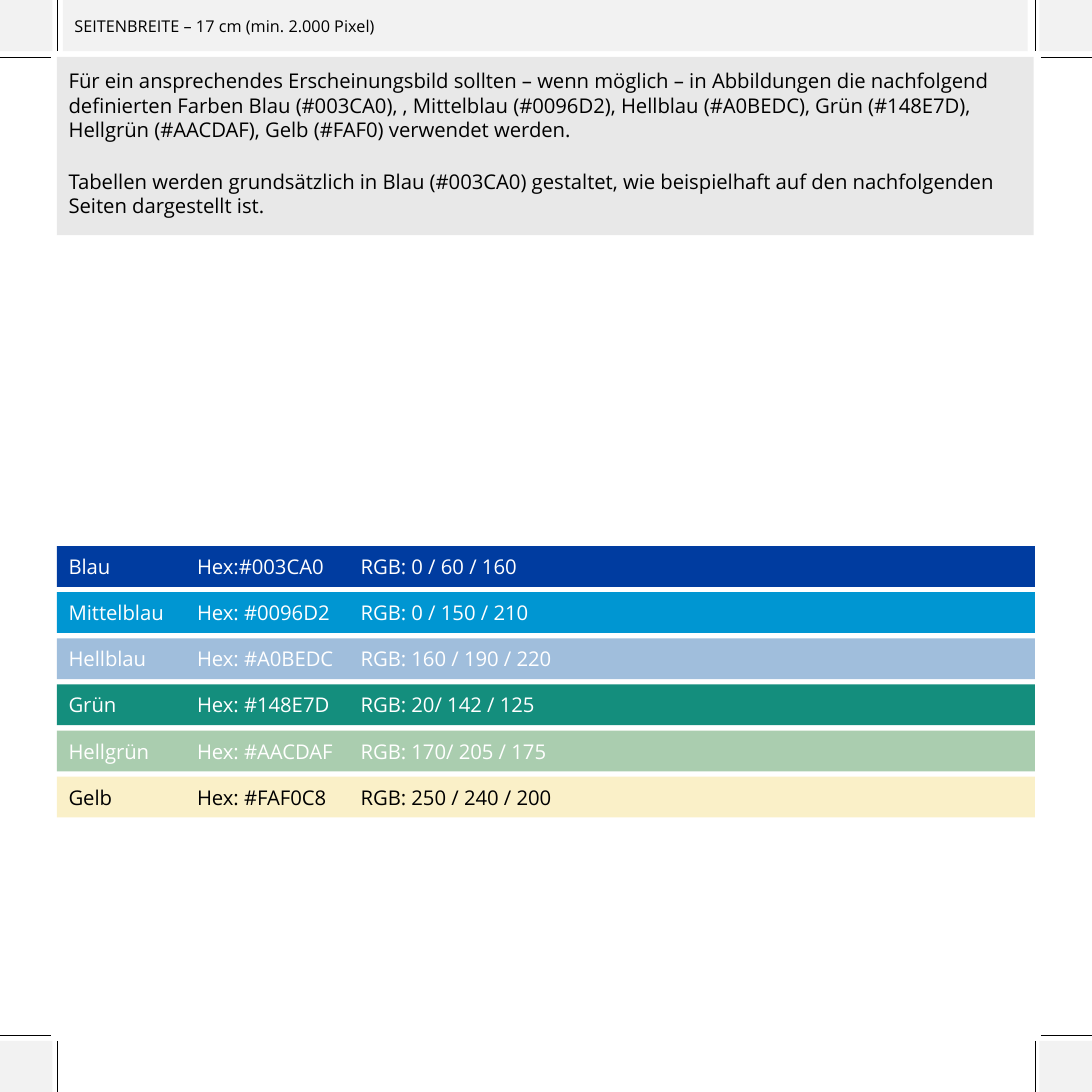
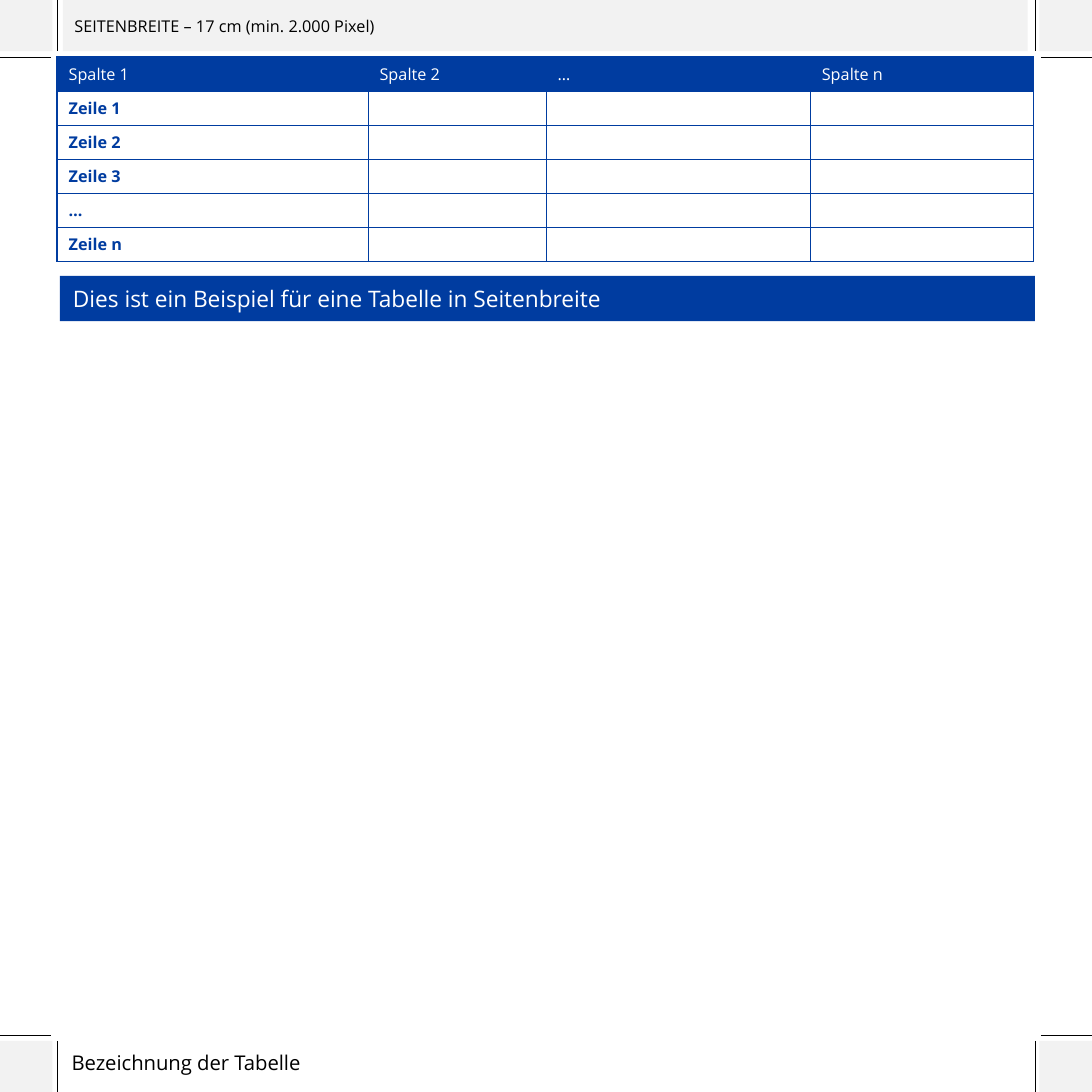
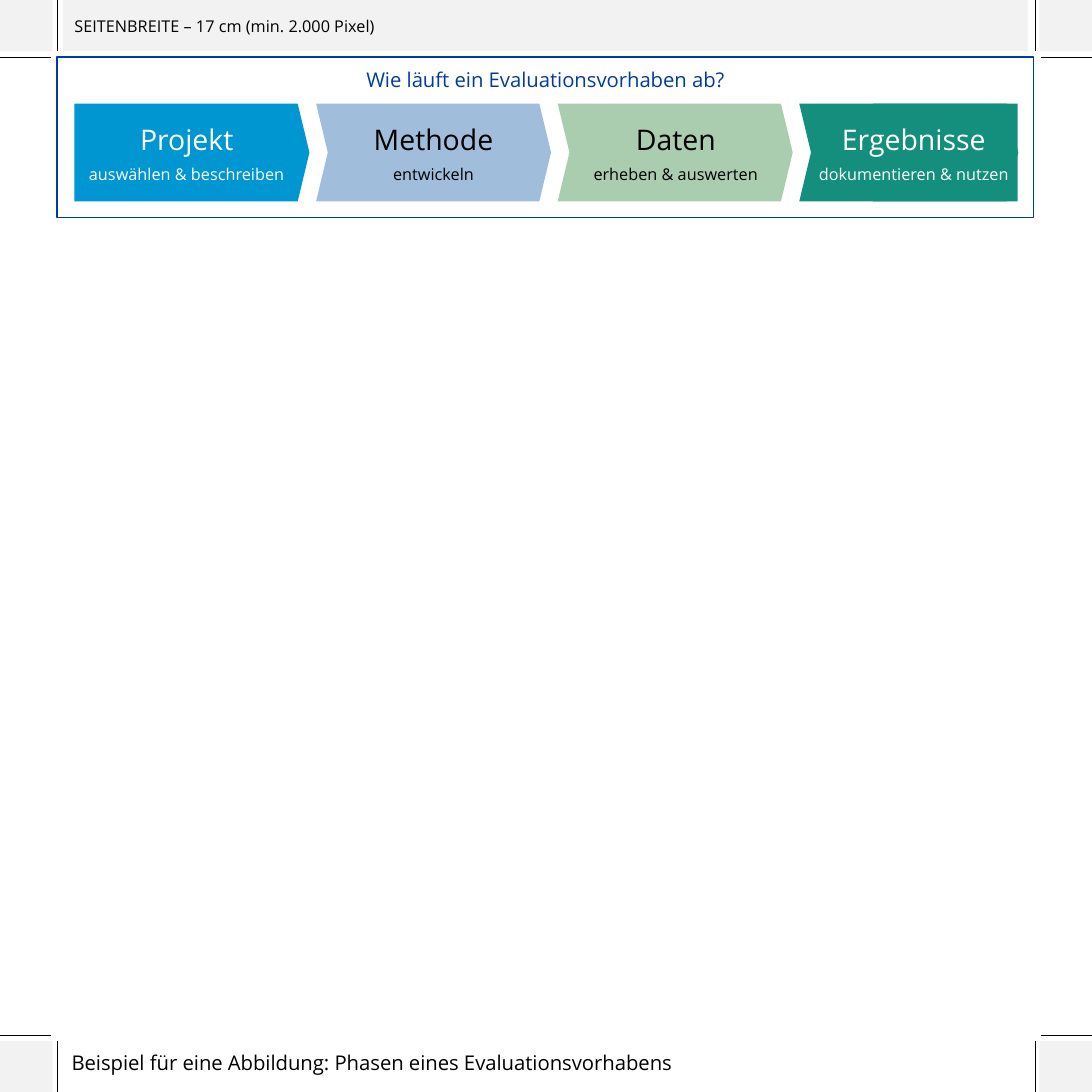
from dataclasses import dataclass
from itertools import product

from lxml import etree
from pptx import Presentation
from pptx.dml.color import RGBColor
from pptx.enum import shapes, text
from pptx.oxml import ns
from pptx.util import Inches, Pt


@dataclass(frozen=True)
class Theme:
    """Colours, type sizes and page edges shared by all slides."""
    font: str = "Open Sans"
    blue: str = "003CA0"
    mid_blue: str = "0096D2"
    light_blue: str = "A0BEDC"
    green: str = "148E7D"
    light_green: str = "AACDAF"
    yellow: str = "FAF0C8"
    crop: str = "F2F2F2"
    panel: str = "E8E8E8"
    black: str = "000000"
    white: str = "FFFFFF"
    small: float = 8
    body: float = 10
    banner: float = 11.2
    phase: float = 14
    hairline: float = 0.25
    frame: float = 0.75
    page: float = 7.48
    left: float = 0.39
    right: float = 7.09
    width: float = 6.69
    inset: float = 0.08


T = Theme()
RECT = shapes.MSO_SHAPE.RECTANGLE
LEFT, CENTER = text.PP_ALIGN.LEFT, text.PP_ALIGN.CENTER
MIDDLE, TOP = text.MSO_ANCHOR.MIDDLE, text.MSO_ANCHOR.TOP

SWATCHES = [
    ("Blau", "Hex:#003CA0", "RGB: 0 / 60 / 160", T.blue, T.white),
    ("Mittelblau", "Hex: #0096D2", "RGB: 0 / 150 / 210", T.mid_blue, T.white),
    ("Hellblau", "Hex: #A0BEDC", "RGB: 160 / 190 / 220", T.light_blue, T.white),
    ("Grün", "Hex: #148E7D", "RGB: 20/ 142 / 125", T.green, T.white),
    ("Hellgrün", "Hex: #AACDAF", "RGB: 170/ 205 / 175", T.light_green, T.white),
    ("Gelb", "Hex: #FAF0C8", "RGB: 250 / 240 / 200", T.yellow, T.black),
]
PHASES = [
    ("Projekt", "auswählen & beschreiben", T.mid_blue, T.white, 1.61, 0.51, 1.54),
    ("Methode", "entwickeln", T.light_blue, T.black, 1.61, 2.24, 1.46),
    ("Daten", "erheben & auswerten", T.light_green, T.black, 1.61, 3.9, 1.46),
    ("Ergebnisse", "dokumentieren & nutzen", T.green, T.white, 1.5, 5.55, 1.42),
]


def rgb(colour):
    """Turn a hex string into a colour."""
    return RGBColor.from_string(colour)


def add_run(paragraph, words, size, colour, bold=False):
    """Append one formatted run."""
    run = paragraph.add_run()
    run.text = words
    run.font.name = T.font
    run.font.size = Pt(size)
    run.font.bold = bold
    run.font.color.rgb = rgb(colour)


def write(frame, lines, colour, align=LEFT, anchor=MIDDLE, inset=T.inset, before=0, after=0):
    """Fill a text frame with (words, size) lines."""
    frame.word_wrap = True
    frame.auto_size = text.MSO_AUTO_SIZE.NONE
    frame.vertical_anchor = anchor
    frame.margin_left = frame.margin_right = Inches(inset)
    frame.margin_top = frame.margin_bottom = Inches(inset)
    for i, (words, size) in enumerate(lines):
        paragraph = frame.add_paragraph() if i else frame.paragraphs[0]
        paragraph.alignment = align
        paragraph.space_before, paragraph.space_after = Pt(before), Pt(after)
        add_run(paragraph, words, size, colour)


def add_block(slide, box, fill=None, line=None, kind=RECT):
    """Add a flat preset shape."""
    block = slide.shapes.add_shape(kind, *map(Inches, box))
    block.shadow.inherit = False
    if fill:
        block.fill.solid()
        block.fill.fore_color.rgb = rgb(fill)
    else:
        block.fill.background()
    if line:
        block.line.color.rgb = rgb(line)
        block.line.width = Pt(T.frame)
    else:
        block.line.fill.background()
    return block


def add_label(slide, box, lines, colour, **style):
    """Add a text box."""
    label = slide.shapes.add_textbox(*map(Inches, box))
    write(label.text_frame, lines, colour, **style)


def add_crop_line(slide, x1, y1, x2, y2):
    """Add one thin crop mark."""
    mark = slide.shapes.add_connector(shapes.MSO_CONNECTOR.STRAIGHT, *map(Inches, (x1, y1, x2, y2)))
    mark.line.color.rgb = rgb(T.black)
    mark.line.width = Pt(T.hairline)
    etree.SubElement(mark.element.spPr, ns.qn("a:effectLst"))
    return mark


def prepare_layout(prs):
    """Keep one layout with the title at the foot of the page."""
    layout = prs.slide_layouts[5]
    for other in list(prs.slide_layouts):
        if other != layout:
            prs.slide_layouts.remove(other)
    scale = T.page / 10
    for holder in prs.slide_master.placeholders:
        holder.left, holder.width = int(holder.left * scale), int(holder.width * scale)
    for holder in list(layout.placeholders):
        if holder.placeholder_format.type == shapes.PP_PLACEHOLDER.TITLE:
            holder.left, holder.top = Inches(T.left), Inches(7.13)
            holder.width, holder.height = Inches(T.width), Inches(0.31)
        else:
            holder.element.getparent().remove(holder.element)
    return layout


def add_page_frame(slide, layout):
    """Build crop marks and the format band, then hand them to the layout."""
    parts = []
    corners = product(((0, 0, T.left), (7.12, 7.13, T.right)), ((0, T.left), (7.13, T.right)))
    for (square_x, mark_x, edge_x), (y, edge_y) in corners:
        parts += [
            add_block(slide, (square_x, y, 0.36, 0.35), T.crop),
            add_crop_line(slide, edge_x, y, edge_x, y + 0.35),
            add_crop_line(slide, mark_x, edge_y, mark_x + 0.35, edge_y),
        ]
    band = add_block(slide, (0.43, 0, 6.61, 0.35), T.crop)
    write(band.text_frame, [("SEITENBREITE – 17 cm (min. 2.000 Pixel)", T.small)], T.black)
    for number, part in enumerate(parts + [band], start=100):
        part.element.xpath(".//p:cNvPr")[0].set("id", str(number))
        layout.shapes.element.append(part.element)


def set_title(slide, words):
    """Write the caption into the title placeholder."""
    title = slide.shapes.title
    write(title.text_frame, [(words, T.body)], T.black, inset=0.1)
    title.text_frame.paragraphs[0].line_spacing = 0.9


def set_tabs(paragraph, stops):
    """Give a paragraph left tab stops."""
    tabs = etree.SubElement(paragraph._p.get_or_add_pPr(), ns.qn("a:tabLst"))
    for stop in stops:
        etree.SubElement(tabs, ns.qn("a:tab"), pos=str(Inches(stop)), algn="l")


def set_borders(cell, widths):
    """Draw left, right, top and bottom cell borders."""
    properties = cell._tc.get_or_add_tcPr()
    for i, (side, width) in enumerate(zip(("lnL", "lnR", "lnT", "lnB"), widths)):
        border = etree.Element(ns.qn(f"a:{side}"), w=str(Pt(width)))
        fill = etree.SubElement(border, ns.qn("a:solidFill"))
        etree.SubElement(fill, ns.qn("a:srgbClr"), val=T.blue)
        properties.insert(i, border)


def fill_cell(cell, words, header):
    """Format one table cell and write its text."""
    cell.margin_left = cell.margin_right = Inches(0.08)
    cell.margin_top = cell.margin_bottom = Inches(0.04)
    paragraph = cell.text_frame.paragraphs[0]
    if header:
        cell.fill.solid()
        cell.fill.fore_color.rgb = rgb(T.blue)
    else:
        cell.fill.background()
    if words:
        add_run(paragraph, words, T.small, T.white if header else T.blue, bold=not header)
    else:
        end = etree.SubElement(paragraph._p, ns.qn("a:endParaRPr"), sz=str(int(T.small * 100)))
        etree.SubElement(end, ns.qn("a:latin"), typeface=T.font)


def add_grid(slide, header, row_names, widths):
    """Add a table with a blue header and named rows."""
    rows = [header] + [[name] + [""] * (len(header) - 1) for name in row_names]
    box = (T.left, T.left, T.width, 0.23 * len(rows))
    table = slide.shapes.add_table(len(rows), len(header), *map(Inches, box)).table
    table.first_row = table.horz_banding = False
    for column, width in zip(table.columns, widths):
        column.width = Inches(width)
    last_row, last_column = len(rows) - 1, len(header) - 1
    for r, row in enumerate(rows):
        table.rows[r].height = Inches(0.23)
        for c, words in enumerate(row):
            cell = table.cell(r, c)
            fill_cell(cell, words, header=r == 0)
            outer = (c == 0, c == last_column, r <= 1, r in (0, last_row))
            set_borders(cell, [T.frame if edge else T.hairline for edge in outer])


def build_colours(slide):
    """Colour rules and the palette bars."""
    title = slide.shapes.title.element
    title.getparent().remove(title)
    panel = add_block(slide, (T.left, T.left, T.width, 1.22), T.panel)
    rules = [
        "Für ein ansprechendes Erscheinungsbild sollten – wenn möglich – in Abbildungen die "
        "nachfolgend definierten Farben Blau (#003CA0), , Mittelblau (#0096D2), Hellblau "
        "(#A0BEDC), Grün (#148E7D), Hellgrün (#AACDAF), Gelb (#FAF0) verwendet werden.",
        "Tabellen werden grundsätzlich in Blau (#003CA0) gestaltet, wie beispielhaft auf den "
        "nachfolgenden Seiten dargestellt ist.",
    ]
    write(panel.text_frame, [(rule, T.body) for rule in rules], T.black, anchor=TOP)
    panel.text_frame.paragraphs[1].space_before = Pt(13.6)
    pitch = (5.32 - 3.74) / (len(SWATCHES) - 1)
    for i, (name, code, values, fill, ink) in enumerate(SWATCHES):
        bar = add_block(slide, (T.left, 3.74 + i * pitch, 6.7, 0.28), fill)
        write(bar.text_frame, [(f"{name}\t{code}\t{values}", T.body)], ink)
        set_tabs(bar.text_frame.paragraphs[0], (0.88, 2))


def build_table(slide):
    """Example table with its banner."""
    set_title(slide, "Bezeichnung der Tabelle")
    add_grid(
        slide,
        ["Spalte 1", "Spalte 2", "…", "Spalte n"],
        ["Zeile 1", "Zeile 2", "Zeile 3", "…", "Zeile n"],
        (2.13, 1.22, 1.81, 1.53),
    )
    banner = add_block(slide, (0.41, 1.89, 6.68, 0.31), T.blue)
    caption = "Dies ist ein Beispiel für eine Tabelle in Seitenbreite"
    write(banner.text_frame, [(caption, T.banner)], T.white, inset=0.09)


def build_phases(slide):
    """Process arrows inside a frame."""
    set_title(slide, "Beispiel für eine Abbildung: Phasen eines Evaluationsvorhabens")
    add_block(slide, (T.left, T.left, T.width, 1.1), line=T.blue)
    question = [("Wie läuft ein Evaluationsvorhaben ab?", T.body)]
    add_label(slide, (T.left, T.left, T.width, 0.31), question, T.blue, align=CENTER)
    top, height = 0.71, 0.67
    for i, (phase, task, fill, ink, width, text_left, text_width) in enumerate(PHASES):
        kind = shapes.MSO_SHAPE.CHEVRON if i else shapes.MSO_SHAPE.PENTAGON
        arrow = add_block(slide, (0.51 + i * 1.655, top, width, height), fill, kind=kind)
        arrow.adjustments[0] = 0.12
        if i == len(PHASES) - 1:
            add_block(slide, (5.98, top, 0.99, height), fill)
        add_label(
            slide, (text_left, top, text_width, height), [(phase, T.phase), (task, T.small)], ink,
            align=CENTER, inset=0.04, before=2, after=2,
        )


def main():
    """Build and save the presentation."""
    prs = Presentation()
    prs.slide_width = prs.slide_height = Inches(T.page)
    layout = prepare_layout(prs)
    for number, build in enumerate((build_colours, build_table, build_phases)):
        slide = prs.slides.add_slide(layout)
        if number == 0:
            add_page_frame(slide, layout)
        build(slide)
    prs.save("out.pptx")


if __name__ == "__main__":
    main()
